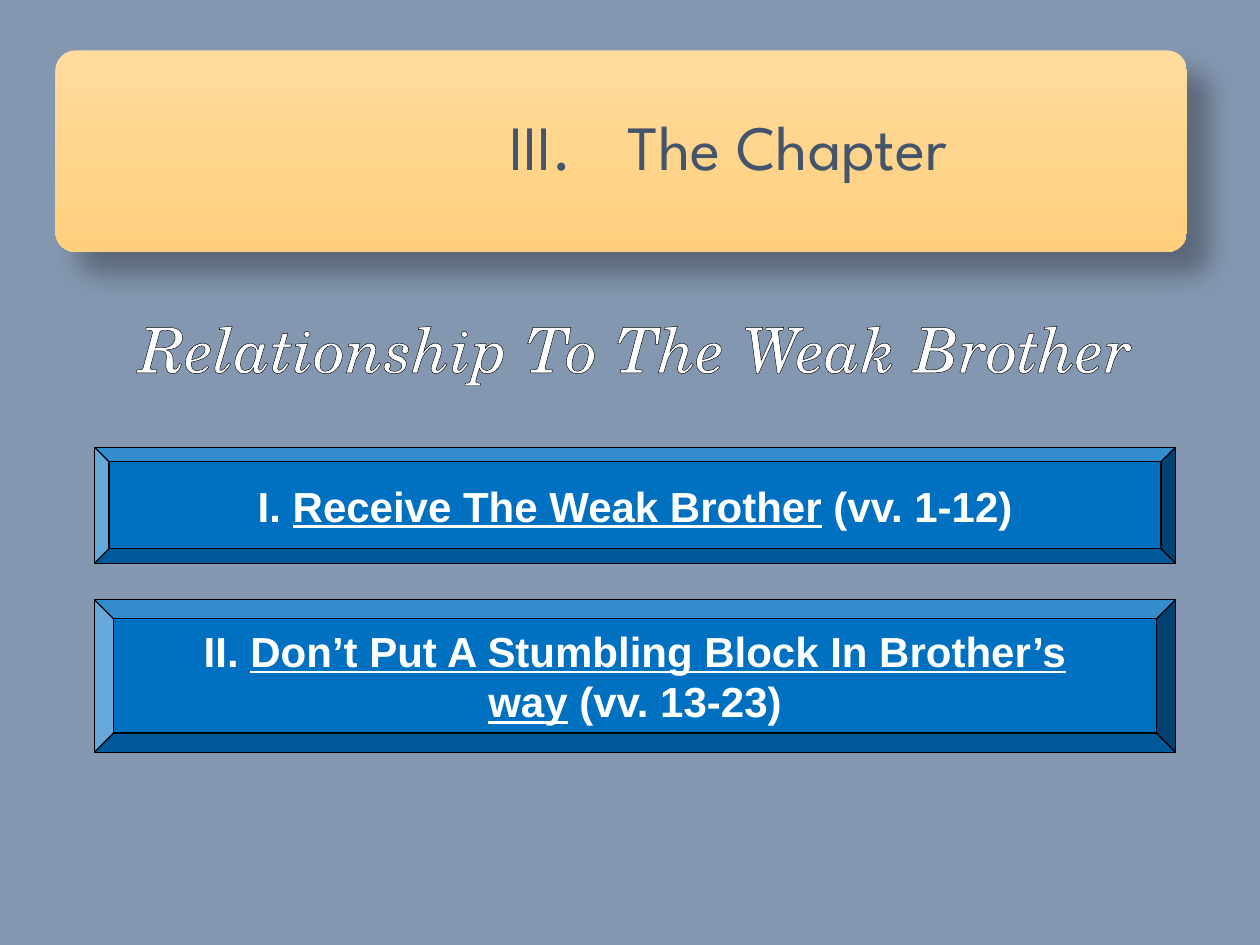
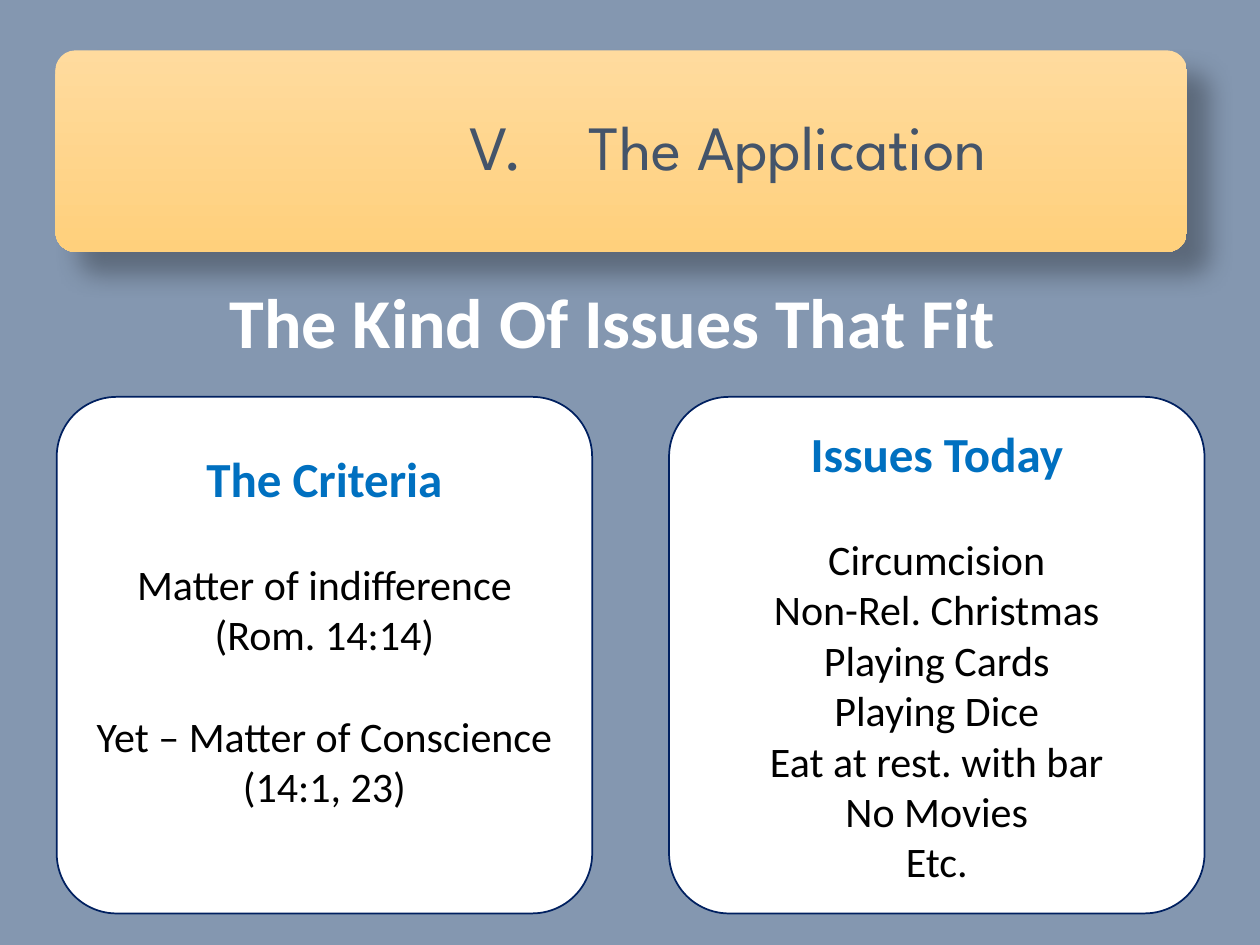
from lxml import etree
from pptx import Presentation, util as u
from pptx.dml.color import RGBColor
from pptx.enum import shapes, text
from pptx.oxml import ns

SLATE = RGBColor(0x84, 0x97, 0xB0)
SAND = RGBColor(0xFF, 0xDB, 0x9E)
GOLD = RGBColor(0xFF, 0xD0, 0x7C)
INK = RGBColor(0x44, 0x54, 0x6A)
BLUE = RGBColor(0x00, 0x70, 0xC0)
NAVY = RGBColor(0x00, 0x20, 0x60)
WHITE = RGBColor(0xFF, 0xFF, 0xFF)
BLACK = RGBColor(0x00, 0x00, 0x00)

BAND = (0.44, 0.4, 8.98, 1.6)
GAP = 29  # points: one open line between groups in a panel


def sub(parent, tag, **attrs):
    node = etree.SubElement(parent, ns.qn(tag))
    for key, val in attrs.items():
        node.set(key, str(val))
    return node


def place(box):
    return [u.Inches(n) for n in box]


def write(frame, runs, first=False, font="Calibri", size=24, color=BLACK,
          bold=False, italic=False, before=0, spacing=None, number=None):
    """Add a centred paragraph; runs are (text, underlined) pairs or a string."""
    para = frame.paragraphs[0] if first else frame.add_paragraph()
    para.alignment = text.PP_ALIGN.CENTER
    if number:
        props = para._p.get_or_add_pPr()
        props.set("marL", str(u.Inches(0.94)))
        props.set("indent", str(-u.Inches(0.94)))
        sub(props, "a:buAutoNum", type="romanUcPeriod", startAt=number)
    if before:
        para.space_before = u.Pt(before)
    if spacing:
        para.line_spacing = spacing
    for words, under in [(runs, False)] if isinstance(runs, str) else runs:
        run = para.add_run()
        run.text = words
        face = run.font
        face.name, face.size, face.color.rgb = font, u.Pt(size), color
        face.bold, face.italic = bold, italic
        if under:
            face.underline = True
    return para


def label(slide, box, words, wrap=True, **style):
    item = slide.shapes.add_textbox(*place(box))
    item.text_frame.word_wrap = wrap
    return item, write(item.text_frame, words, first=True, **style)


def block(slide, kind, box, adjust, fill=None, line=None, width=1):
    item = slide.shapes.add_shape(kind, *place(box))
    item.adjustments[0] = adjust
    item.shadow.inherit = False
    if fill is not None:
        item.fill.solid()
        item.fill.fore_color.rgb = fill
    if line is None:
        item.line.fill.background()
    else:
        item.line.color.rgb = line
        item.line.width = u.Pt(width)
    item.text_frame.vertical_anchor = text.MSO_ANCHOR.MIDDLE
    return item


def header(slide, box, number, words):
    band = block(slide, shapes.MSO_SHAPE.ROUNDED_RECTANGLE, box, 0.099)
    band.fill.gradient()
    band.fill.gradient_angle = 270
    for stop, color in zip(band.fill.gradient_stops, (SAND, GOLD)):
        stop.color.rgb = color
    effects = band._element.spPr.find(ns.qn("a:effectLst"))
    shade = sub(effects, "a:outerShdw", blurRad=u.Pt(15), dist=u.Pt(18),
                dir=45 * 60000, algn="tl", rotWithShape=0)
    sub(sub(shade, "a:srgbClr", val=BLACK), "a:alpha", val=30000)
    left, top = box[:2]
    title, _ = label(slide, (left + 2.27, top + 0.4, 6.14, 0.71), words,
                     font="League Spartan", size=36, color=INK, number=number)
    title.text_frame.auto_size = text.MSO_AUTO_SIZE.SHAPE_TO_FIT_TEXT


def start(deck, number, words):
    slide = deck.slides.add_slide(deck.slide_layouts[6])
    slide.background.fill.solid()
    slide.background.fill.fore_color.rgb = SLATE
    header(slide, BAND, number, words)
    return slide


def bar(slide, box, lines):
    item = block(slide, shapes.MSO_SHAPE.BEVEL, box, 0.125, BLUE, BLACK, 0.75)
    item.text_frame.word_wrap = False
    for i, runs in enumerate(lines):
        write(item.text_frame, runs, first=i == 0, font="Arial",
              color=WHITE, bold=True)


def panel(slide, box, heading, groups, foot=0.05):
    """Draw a card; an open line goes above each group of lines."""
    item = block(slide, shapes.MSO_SHAPE.ROUNDED_RECTANGLE, box, 0.116,
                 WHITE, NAVY)
    frame = item.text_frame
    frame.word_wrap = True
    frame.margin_bottom = u.Inches(foot)
    write(frame, heading, first=True, size=28, color=BLUE, bold=True)
    for group in groups:
        for i, words in enumerate(group):
            write(frame, words, before=0 if i else GAP)


def outline(para, color, width):
    for run in para.runs:
        run.font.color.rgb = WHITE
        props = run._r.get_or_add_rPr()
        edge = sub(props, "a:ln", w=u.Pt(width))
        sub(sub(edge, "a:solidFill"), "a:srgbClr", val=color)
        props.insert(0, edge)


def chapter(deck):
    slide = start(deck, 3, "The Chapter")
    bar(slide, (0.75, 3.55, 8.58, 0.92), [
        [("I. ", False), ("Receive The Weak Brother", True),
         (" (vv. 1-12)", False)]])
    bar(slide, (0.75, 4.76, 8.58, 1.21), [
        [("II. ", False), ("Don’t Put A Stumbling Block In Brother’s", True)],
        [("way", True), (" (vv. 13-23)", False)]])
    _, para = label(slide, (0.92, 2.41, 8.25, 1),
                    "Relationship To The Weak Brother", wrap=False,
                    font="TeX Gyre Schola", size=36, color=WHITE, italic=True)
    outline(para, BLACK, 0.75)


def issues(deck):
    slide = start(deck, 5, "The Application")
    label(slide, (0.55, 2.24, 8.62, 1.45), "The Kind Of Issues That Fit",
          size=40, color=WHITE, bold=True, spacing=0.9)
    cards = [
        ("The Criteria",
         [["Matter of indifference", "(Rom. 14:14)"],
          ["Yet – Matter of Conscience (14:1, 23)"]], 0.45),
        ("Issues Today",
         [["Circumcision", "Non-Rel. Christmas", "Playing Cards",
           "Playing Dice", "Eat at rest. with bar", "No Movies", "Etc."]],
         0.05)]
    for i, (heading, groups, foot) in enumerate(cards):
        panel(slide, (0.45 + i * 4.86, 3.15, 4.25, 4.1), heading, groups, foot)


def main():
    deck = Presentation()
    deck.slide_width, deck.slide_height = u.Inches(10), u.Inches(7.5)
    chapter(deck)
    issues(deck)
    deck.save("out.pptx")


if __name__ == "__main__":
    main()
